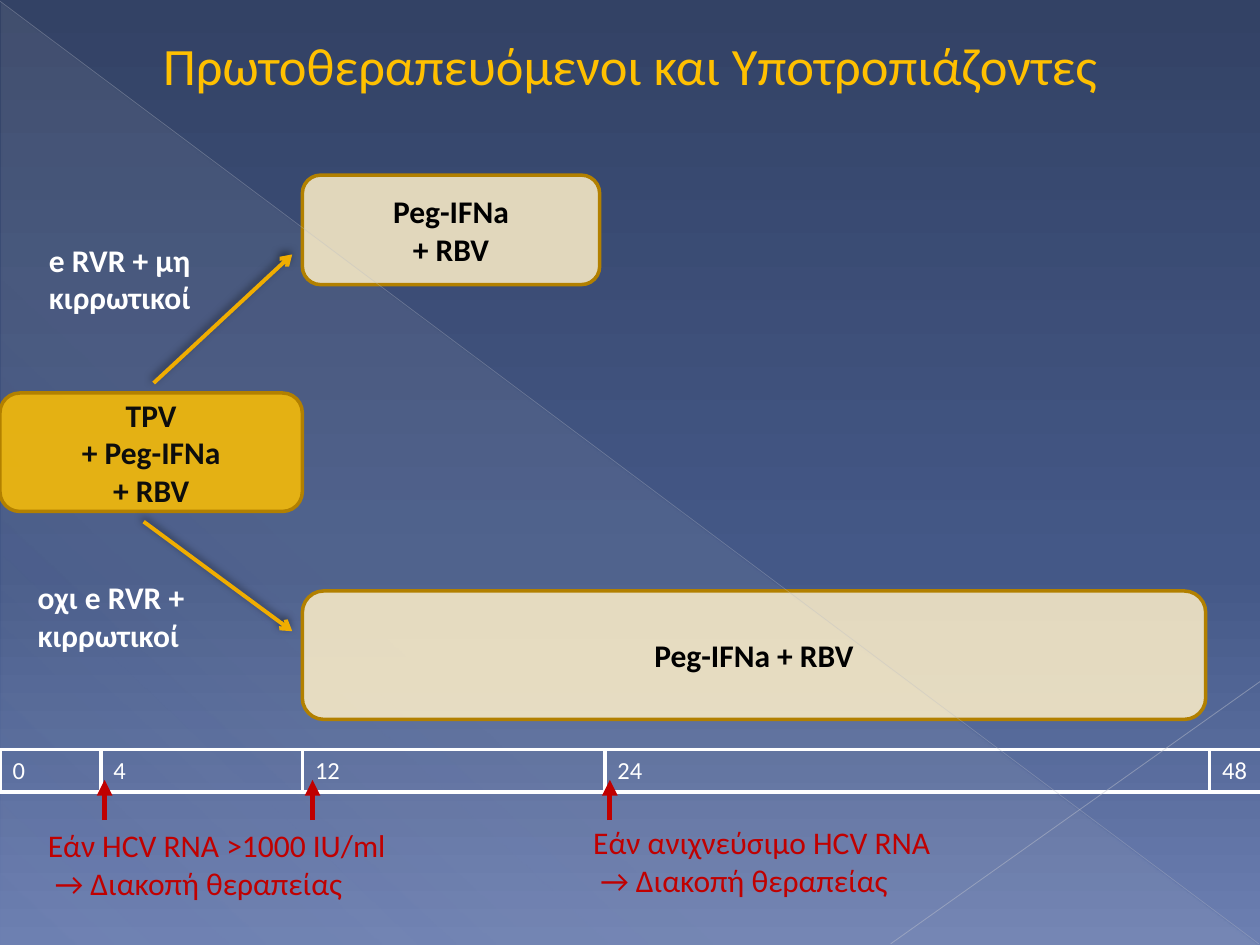
import lxml.etree
import pptx
import pptx.dml.color
import pptx.enum.shapes
import pptx.enum.text
import pptx.oxml.ns
import pptx.util

Pt = pptx.util.Pt
hue = pptx.dml.color.RGBColor.from_string
qn = pptx.oxml.ns.qn
kinds = pptx.enum.shapes.MSO_SHAPE
LEFT = pptx.enum.text.PP_ALIGN.LEFT
MID = pptx.enum.text.PP_ALIGN.CENTER
SPACE = "http://schemas.openxmlformats.org/drawingml/2006/main"


def put(node, xml):
    """Append DrawingML markup to an element."""
    root = pptx.oxml.parse_xml(f'<a:x xmlns:a="{SPACE}">{xml}</a:x>')
    for child in list(root):
        node.append(child)


def write(frame, lines, align, tone, **form):
    """Fill a text frame with one paragraph per line."""
    frame.word_wrap = True
    for i, line in enumerate(lines):
        para = frame.paragraphs[0] if i == 0 else frame.add_paragraph()
        para.alignment = align
        run = para.add_run()
        run.text = line
        run.font.color.rgb = hue(tone)
        for key, value in {"name": "Calibri", "size": Pt(18), **form}.items():
            setattr(run.font, key, value)


deck = pptx.Presentation()
deck.slide_width, deck.slide_height = Pt(720), Pt(540)
slide = deck.slides.add_slide(deck.slide_layouts[6])
shapes = slide.shapes

# Backdrop: gradients as (position, colour, opacity) in percent
slide.background.fill.gradient()
wedge = shapes.add_shape(kinds.RIGHT_TRIANGLE, Pt(0.7), Pt(1.4), Pt(718.6), Pt(538.6))
wedge.shadow.inherit = False
wedge.line.fill.background()
wedge.fill.gradient()
blends = [
    (slide.background.fill, slide.element.cSld.find(".//" + qn("a:gradFill")), 90,
     [(0, "334265", 100), (60, "445887", 100), (100, "6C7FB1", 100)]),
    (wedge.fill, wedge.element.find(".//" + qn("a:gradFill")), 133,
     [(0, "D4D4D6", 10), (70, "D4D4D6", 8), (100, "D4D4D6", 1)]),
]
for fill, grad, angle, stops in blends:
    fill.gradient_angle = 360 - angle
    ramp = grad.find(qn("a:gsLst"))
    for old in list(ramp):
        ramp.remove(old)
    for pos, tone, clear in stops:
        put(ramp, f'<a:gs pos="{pos * 1000}"><a:srgbClr val="{tone}">'
                  f'<a:alpha val="{clear * 1000}"/></a:srgbClr></a:gs>')

# Treatment boxes
boxes = [
    (0, 224.6, 172.8, 67.7, "FFC000", "0D0D0D", ["TPV", "+ Peg-IFNa", "+ RBV"]),
    (172.8, 100.1, 169.9, 62.6, "FFF0C9", "000000", ["Peg-IFNa", "+ RBV"]),
    (172.8, 337.7, 516.2, 73.4, "FFF0C9", "000000", ["Peg-IFNa + RBV"]),
]
for x, y, w, h, tone, ink, lines in boxes:
    box = shapes.add_shape(kinds.ROUNDED_RECTANGLE, Pt(x), Pt(y), Pt(w), Pt(h))
    box.shadow.inherit = False
    box.fill.solid()
    box.fill.fore_color.rgb = hue(tone)
    put(box.element.find(".//" + qn("a:srgbClr")), '<a:alpha val="85000"/>')
    box.line.color.rgb = hue("B28000")
    box.line.width = Pt(2)
    box.text_frame.vertical_anchor = pptx.enum.text.MSO_ANCHOR.MIDDLE
    write(box.text_frame, lines, MID, ink, bold=True)

# Timeline: one column per two weeks
weeks = [0, 4, 12, 24, 48]
count = 25
grid = shapes.add_table(1, count, Pt(0), Pt(428.4), Pt(720), Pt(22.3)).table
for key in ("first_row", "horz_banding"):
    setattr(grid, key, False)
for i in range(count):
    grid.columns[i].width = Pt(720 / count)
    cell = grid.cell(0, i)
    cell.margin_right = 0
    if 2 * i in weeks:
        write(cell.text_frame, [str(2 * i)], LEFT, "FFFFFF", size=Pt(14))
    else:
        put(cell.text_frame.paragraphs[0]._p, '<a:endParaRPr sz="1400"/>')
    edges = {"L": 2 * i in weeks, "R": 2 * i + 2 in weeks, "T": True, "B": True}
    for side, shown in edges.items():
        ink = ('<a:solidFill><a:srgbClr val="FFFFFF"/></a:solidFill>'
               if shown else "<a:noFill/>")
        put(cell._tc.get_or_add_tcPr(), f'<a:ln{side} w="28575">{ink}</a:ln{side}>')
    cell.fill.background()

# Lines and arrows: start, end, colour, width, opacity, head, shadow
glow = ('<a:outerShdw blurRad="63500" dist="25400" dir="14700000">'
        '<a:srgbClr val="000000"><a:alpha val="50000"/></a:srgbClr></a:outerShdw>')
lines = [
    (0, 0.7, 719.3, 539.3, "B9BDC8", 0.39, 35, "none", ""),
    (720, 389.5, 509, 539.3, "C1C4CE", 0.47, 45, "none", ""),
    (87.8, 218.9, 167, 145.4, "F0AD00", 2.25, 100, "arrow", glow),
    (82.1, 298.1, 167, 360.7, "F0AD00", 2.25, 100, "arrow", glow),
]
for x in (59.8, 178.6, 348.5):
    lines.append((x, 468.7, x, 445.7, "C00000", 3, 100, "triangle", ""))
for x1, y1, x2, y2, tone, width, clear, head, shade in lines:
    link = shapes.add_connector(pptx.enum.shapes.MSO_CONNECTOR.STRAIGHT,
                                Pt(x1), Pt(y1), Pt(x2), Pt(y2))
    link.line.color.rgb = hue(tone)
    link.line.width = Pt(width)
    put(link.element.find(".//" + qn("a:srgbClr")), f'<a:alpha val="{clear * 1000}"/>')
    put(link.element.spPr.find(qn("a:ln")), f'<a:tailEnd type="{head}"/>')
    put(link.element.spPr, f"<a:effectLst>{shade}</a:effectLst>")

# Title, branch labels and stopping rules
stop = " → Διακοπή θεραπείας"
bold = {"bold": True}
texts = [
    (14.4, 15.1, 691.9, 43.9, MID, "FFC000", {"size": Pt(30)},
     ["Πρωτοθεραπευόμενοι και Υποτροπιάζοντες"]),
    (14.4, 133.9, 108, 51.1, MID, "FFFFFF", bold, ["e RVR + μη κιρρωτικοί"]),
    (14.4, 326.9, 102.2, 51.1, LEFT, "FFFFFF", bold, ["οχι e RVR + κιρρωτικοί"]),
    (20.2, 468.7, 209.5, 51.1, LEFT, "C00000", {}, ["Εάν HCV RNA >1000 IU/ml", stop]),
    (331.9, 466.6, 209.5, 51.1, LEFT, "C00000", {}, ["Εάν ανιχνεύσιμο HCV RNA", stop]),
]
for x, y, w, h, align, tone, form, words in texts:
    label = shapes.add_textbox(Pt(x), Pt(y), Pt(w), Pt(h))
    write(label.text_frame, words, align, tone, **form)

deck.save("out.pptx")
